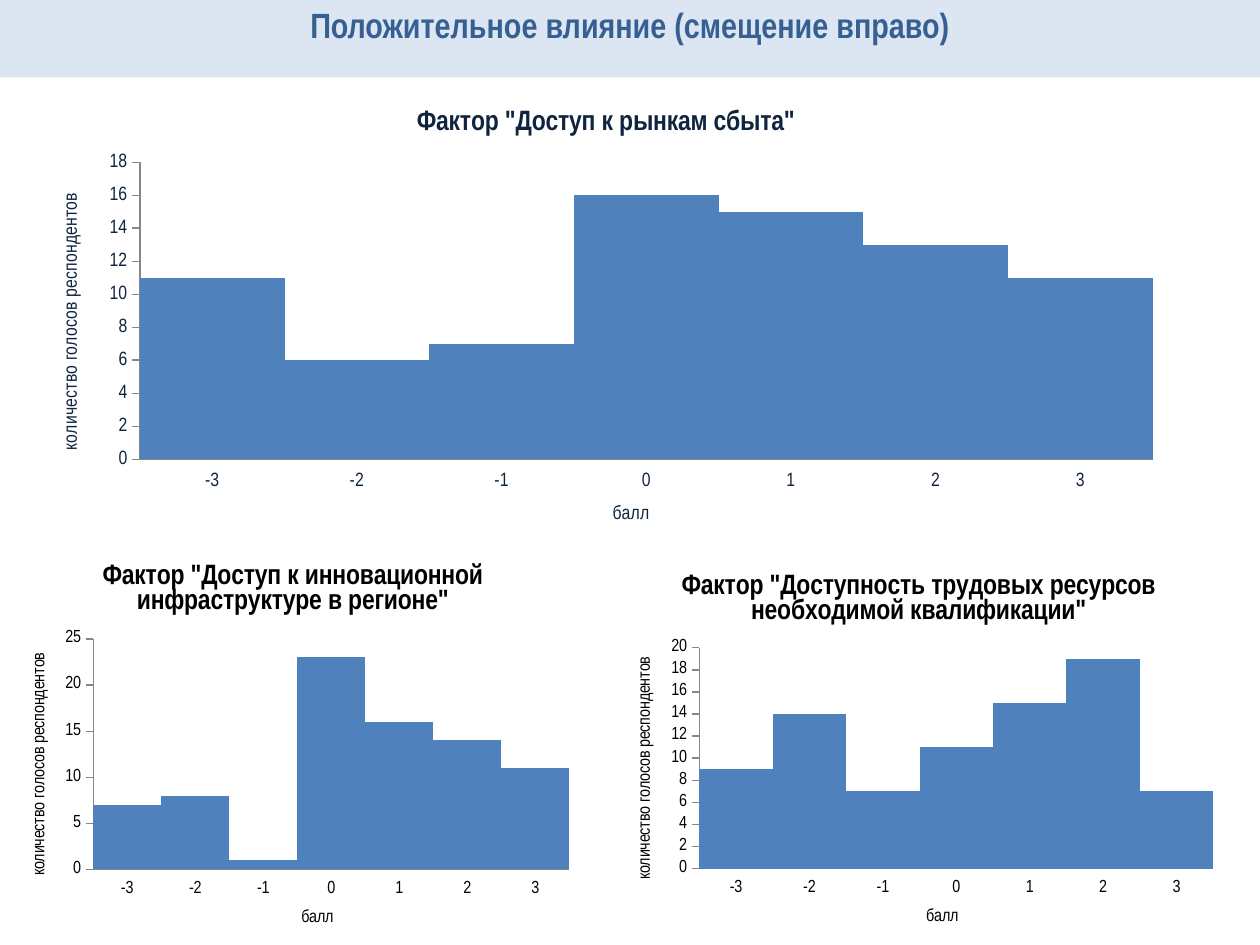
from dataclasses import dataclass

from pptx import Presentation
from pptx import util as u
from pptx.chart import data as cd
from pptx.dml import color as dc
from pptx.enum import chart as ec
from pptx.enum import text as et
from pptx.oxml import parse_xml
from pptx.oxml.ns import nsdecls


@dataclass(frozen=True)
class Theme:
    font: str = "Arial Narrow"
    band: str = "DCE6F2"
    head: str = "376092"
    bar: str = "4F81BD"
    axis: str = "868686"
    navy: str = "0F243E"
    black: str = "000000"
    head_pt: int = 20
    title_pt: int = 16


@dataclass(frozen=True)
class Box:
    """Left, top, width and height in centimetres."""
    x: float
    y: float
    w: float
    h: float


@dataclass(frozen=True)
class Histogram:
    title: str
    votes: tuple[int, ...]
    frame: Box
    plot: Box
    top: int
    step: int
    size: int
    ink: str


THEME = Theme()
SCORES = [str(n) for n in range(-3, 4)]

CHARTS = (
    Histogram('Фактор "Доступность трудовых ресурсов необходимой квалификации"',
              (9, 14, 7, 11, 15, 19, 7), Box(12.32, 11.13, 12.4, 7.92),
              Box(14.1, 13.06, 10.36, 4.45), 20, 2, 10, THEME.black),
    Histogram('Фактор "Доступ к инновационной инфраструктуре в регионе"',
              (7, 8, 1, 23, 16, 14, 11), Box(0.1, 10.92, 11.61, 8.13),
              Box(1.88, 12.88, 9.6, 4.65), 25, 5, 10, THEME.black),
    Histogram('Фактор "Доступ к рынкам сбыта"',
              (11, 6, 7, 16, 15, 13, 11), Box(0.71, 1.75, 23.01, 9.17),
              Box(2.82, 3.27, 20.42, 5.99), 18, 2, 11, THEME.navy),
)


def rgb(code: str) -> dc.RGBColor:
    return dc.RGBColor.from_string(code)


def style(font, size: int, ink: str, bold: bool) -> None:
    font.name = THEME.font
    font.size = u.Pt(size)
    font.bold = bold
    font.color.rgb = rgb(ink)


def label(owner, words: str, size: int, ink: str, bold: bool = False) -> None:
    """Set the title of a chart or of an axis."""
    frame = owner.text_frame
    frame.text = words
    style(frame.paragraphs[0].runs[0].font, size, ink, bold)


def place(chart, frame: Box, plot: Box) -> None:
    """Fix the inner plot area as fractions of the chart frame."""
    parts = {"x": (plot.x - frame.x) / frame.w, "y": (plot.y - frame.y) / frame.h,
             "w": plot.w / frame.w, "h": plot.h / frame.h}
    modes = "".join(f'<c:{k}Mode val="edge"/>' for k in "xy")
    sizes = "".join(f'<c:{k} val="{v:.4f}"/>' for k, v in parts.items())
    area = chart.element.chart.plotArea
    for old in area.findall("{*}layout"):
        area.remove(old)
    area.insert(0, parse_xml(
        f'<c:layout {nsdecls("c")}><c:manualLayout>'
        f'<c:layoutTarget val="inner"/>{modes}{sizes}'
        '</c:manualLayout></c:layout>'))


def draw(slide, item: Histogram) -> None:
    data = cd.CategoryChartData()
    data.categories = SCORES
    data.add_series("Series 1", item.votes)
    box = item.frame
    chart = slide.shapes.add_chart(
        ec.XL_CHART_TYPE.COLUMN_CLUSTERED, u.Cm(box.x), u.Cm(box.y),
        u.Cm(box.w), u.Cm(box.h), data).chart
    style(chart.font, item.size, item.ink, False)
    chart.has_legend = False
    chart.has_title = True
    label(chart.chart_title, item.title, THEME.title_pt, item.ink, True)

    # Touching bars
    bars = chart.plots[0]
    bars.gap_width = 0
    bars.vary_by_categories = False
    fill = bars.series[0].format.fill
    fill.solid()
    fill.fore_color.rgb = rgb(THEME.bar)

    # Axes
    tick = ec.XL_TICK_MARK
    for axis, words, mark in (
            (chart.category_axis, "балл", tick.NONE),
            (chart.value_axis, "количество голосов респондентов", tick.OUTSIDE)):
        axis.has_title = True
        label(axis.axis_title, words, item.size, item.ink)
        axis.has_major_gridlines = False
        axis.major_tick_mark = mark
        axis.minor_tick_mark = tick.NONE
        axis.format.line.color.rgb = rgb(THEME.axis)
    chart.category_axis.tick_label_position = ec.XL_TICK_LABEL_POSITION.LOW
    scale = chart.value_axis
    scale.minimum_scale = 0
    scale.maximum_scale = item.top
    scale.major_unit = item.step
    place(chart, item.frame, item.plot)


def banner(slide, words: str, box: Box) -> None:
    head = slide.shapes.title
    head.left, head.top = u.Cm(box.x), u.Cm(box.y)
    head.width, head.height = u.Cm(box.w), u.Cm(box.h)
    head.fill.solid()
    head.fill.fore_color.rgb = rgb(THEME.band)
    frame = head.text_frame
    frame.text = words
    frame.word_wrap = True
    frame.auto_size = et.MSO_AUTO_SIZE.NONE
    frame.vertical_anchor = et.MSO_ANCHOR.TOP
    line = frame.paragraphs[0]
    line.alignment = et.PP_ALIGN.CENTER
    style(line.runs[0].font, THEME.head_pt, THEME.head, True)


def main() -> None:
    deck = Presentation()
    deck.slide_width, deck.slide_height = u.Cm(25.4), u.Cm(19.05)
    slide = deck.slides.add_slide(deck.slide_layouts[5])
    banner(slide, "Положительное влияние (смещение вправо)",
           Box(0, -0.05, 25.4, 1.61))
    for item in CHARTS:
        draw(slide, item)
    deck.save("out.pptx")


if __name__ == "__main__":
    main()
